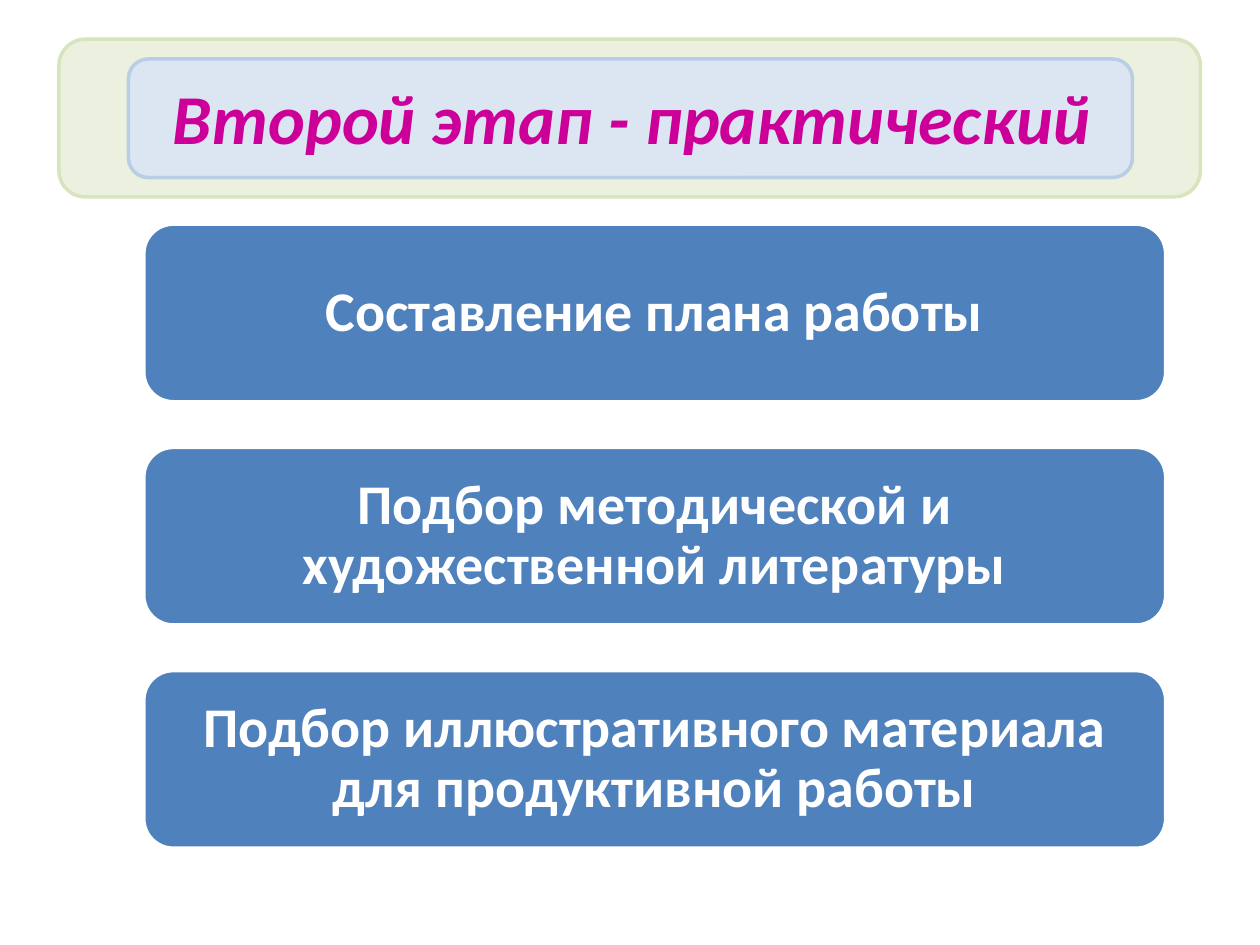
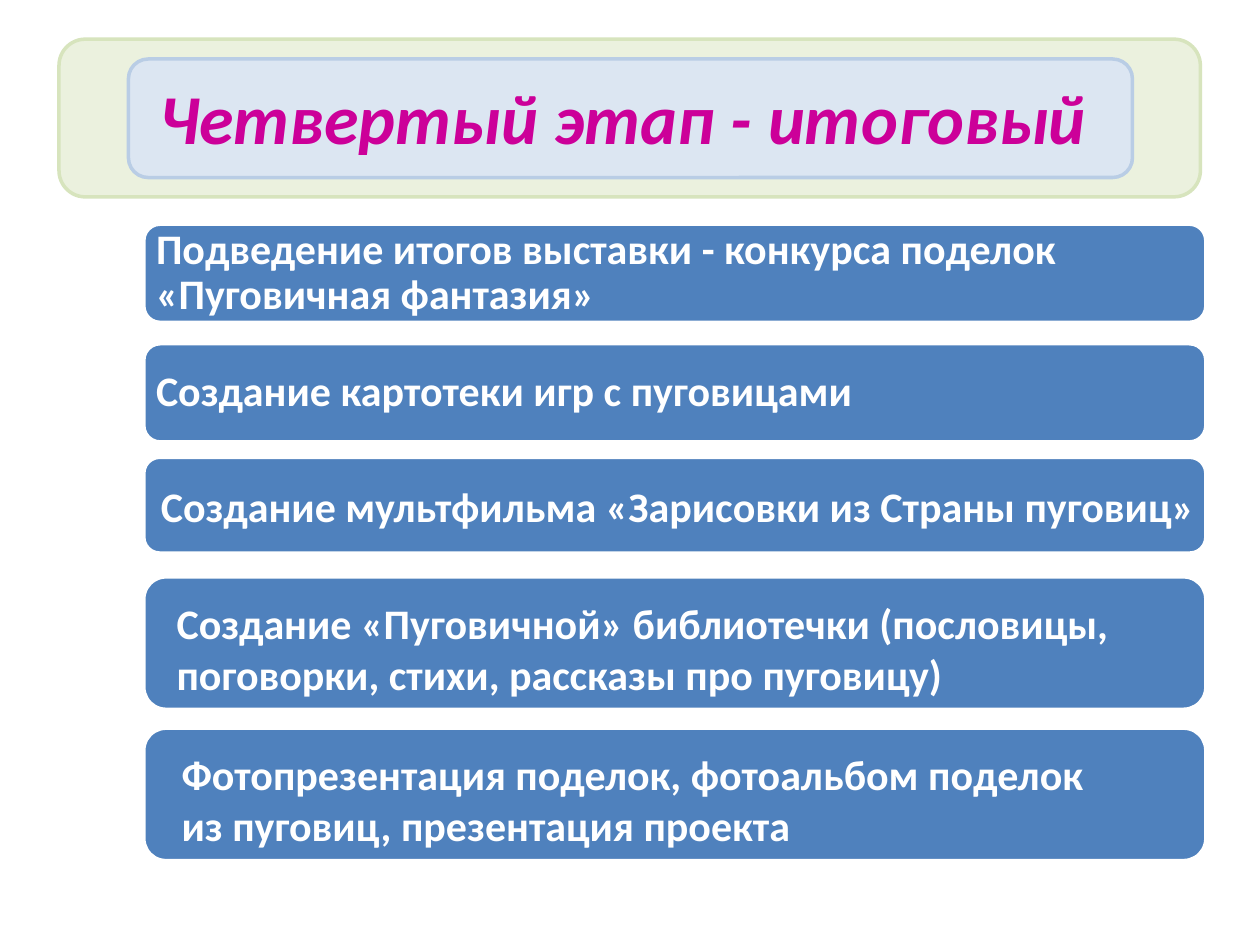
from dataclasses import dataclass

import pptx
import pptx.dml.color
import pptx.enum.shapes
import pptx.enum.text
import pptx.util
from pptx.util import Cm

ALIGN = pptx.enum.text.PP_ALIGN


@dataclass(frozen=True)
class Theme:
    font: str = "Calibri"
    outer_fill: str = "EBF1DE"
    outer_line: str = "D7E4BD"
    inner_fill: str = "DCE6F2"
    inner_line: str = "B9CDE5"
    title: str = "CC0099"
    card: str = "4F81BD"
    white: str = "FFFFFF"
    title_size: int = 40
    stage_size: int = 32
    result_size: int = 24
    line_width: int = 2


def rgb(value):
    return pptx.dml.color.RGBColor.from_string(value)


class Deck:
    def __init__(self, theme):
        self.theme = theme
        self.presentation = pptx.Presentation()
        self.presentation.slide_width = Cm(25.4)
        self.presentation.slide_height = Cm(19.05)
        self.slide = None

    def add_slide(self, title, title_left):
        theme = self.theme
        self.slide = self.presentation.slides.add_slide(self.presentation.slide_layouts[6])
        self.add_panel(1.19, 0.79, 23.01, 3.18, theme.outer_fill, theme.outer_line)
        self.add_panel(2.59, 1.19, 20.24, 2.39, theme.inner_fill, theme.inner_line)
        box = self.slide.shapes.add_textbox(Cm(title_left), Cm(0.75), Cm(22.86), Cm(3.18))
        self.add_text(box, [title], theme.title_size, theme.title, ALIGN.CENTER, italic=True)

    def add_panel(self, left, top, width, height, fill, line):
        shape = self.slide.shapes.add_shape(
            pptx.enum.shapes.MSO_SHAPE.ROUNDED_RECTANGLE,
            Cm(left), Cm(top), Cm(width), Cm(height))
        shape.shadow.inherit = False
        shape.fill.solid()
        shape.fill.fore_color.rgb = rgb(fill)
        shape.line.color.rgb = rgb(line)
        shape.line.width = pptx.util.Pt(self.theme.line_width)
        return shape

    def add_card(self, top, width, height, lines, size, align=ALIGN.LEFT,
                 spacing=1.0, insets=(0.15, 0, 0, 0)):
        """Add a blue card; insets are left, top, right and bottom in centimetres."""
        theme = self.theme
        card = self.add_panel(2.9, top, width, height, theme.card, theme.white)
        frame = card.text_frame
        (frame.margin_left, frame.margin_top,
         frame.margin_right, frame.margin_bottom) = map(Cm, insets)
        self.add_text(card, lines, size, theme.white, align, spacing)

    def add_text(self, shape, lines, size, color, align, spacing=1.0, italic=False):
        frame = shape.text_frame
        frame.word_wrap = True
        frame.vertical_anchor = pptx.enum.text.MSO_ANCHOR.MIDDLE
        for index, line in enumerate(lines):
            paragraph = frame.add_paragraph() if index else frame.paragraphs[0]
            paragraph.alignment = align
            paragraph.line_spacing = spacing
            run = paragraph.add_run()
            run.text = line
            run.font.name = self.theme.font
            run.font.size = pptx.util.Pt(size)
            run.font.bold = True
            run.font.italic = italic
            run.font.color.rgb = rgb(color)


def add_practical_stage(deck):
    deck.add_slide("Второй этап - практический", title_left=1.3)
    stages = [
        "Составление плана работы",
        "Подбор методической и художественной литературы",
        "Подбор иллюстративного материала для продуктивной работы",
    ]
    for index, stage in enumerate(stages):
        deck.add_card(4.52 + 4.5 * index, 20.6, 3.58, [stage], deck.theme.stage_size,
                      ALIGN.CENTER, spacing=0.9, insets=(0.15, 0.15, 0.15, 0.15))


def add_final_stage(deck):
    deck.add_slide("Четвертый этап - итоговый", title_left=1.12)
    # Top, height, line spacing, left inset, top inset, lines
    results = [
        (4.52, 1.98, 0.9, 0.15, 0,
         ["Подведение итогов выставки - конкурса поделок «Пуговичная фантазия»"]),
        (6.93, 1.98, 0.9, 0.15, 0, ["Создание картотеки игр с пуговицами"]),
        (9.22, 1.93, 1.0, 0.25, 0, ["Создание мультфильма «Зарисовки из Страны пуговиц»"]),
        (11.63, 2.67, 1.0, 0.53, 0.2,
         ["Создание «Пуговичной» библиотечки (пословицы,",
          "поговорки, стихи, рассказы про пуговицу)"]),
        (14.68, 2.67, 1.0, 0.63, 0.2,
         ["Фотопрезентация поделок, фотоальбом поделок",
          "из пуговиц, презентация проекта"]),
    ]
    for top, height, spacing, left_inset, top_inset, lines in results:
        deck.add_card(top, 21.41, height, lines, deck.theme.result_size,
                      spacing=spacing, insets=(left_inset, top_inset, 0, 0))


def main():
    deck = Deck(Theme())
    add_practical_stage(deck)
    add_final_stage(deck)
    deck.presentation.save("out.pptx")


if __name__ == "__main__":
    main()
